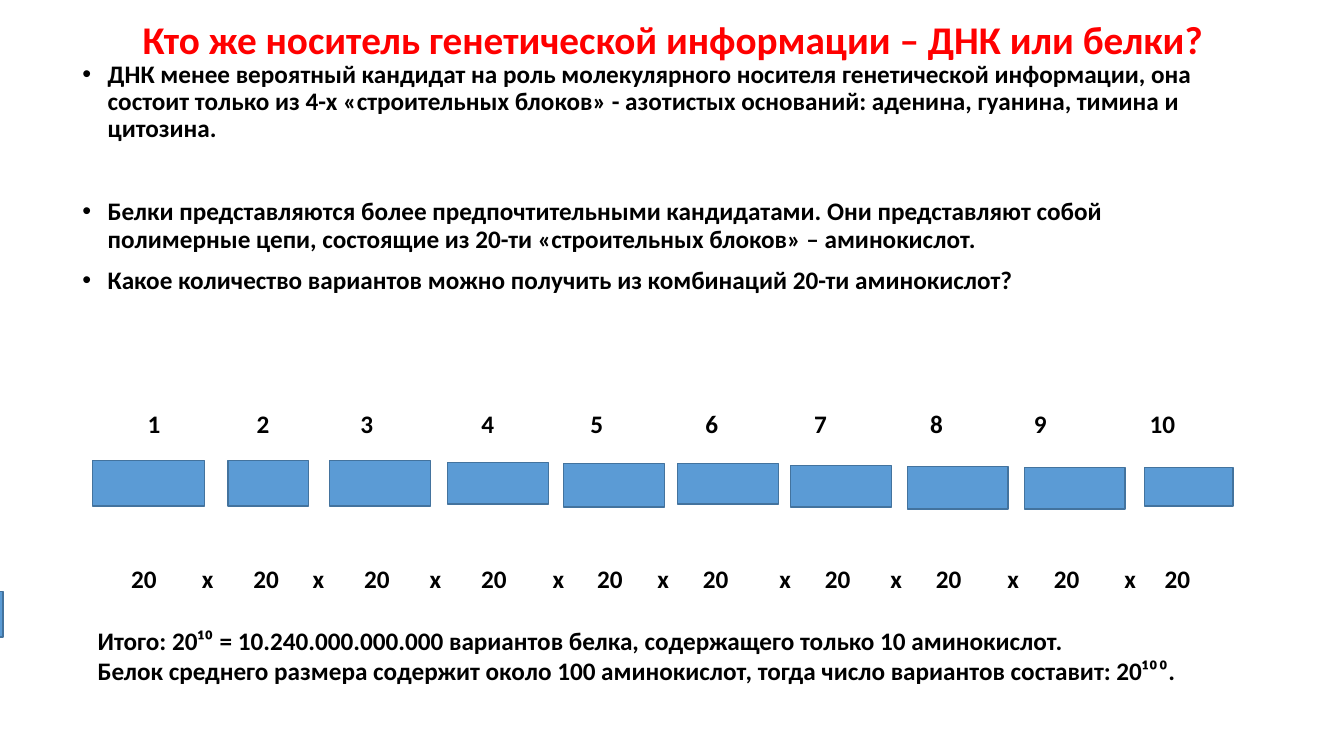
from dataclasses import dataclass

from lxml.etree import SubElement
from pptx import Presentation
from pptx.dml.color import RGBColor
from pptx.enum.shapes import MSO_SHAPE as Shape
from pptx.enum.text import MSO_ANCHOR as Anchor, PP_ALIGN as Align
from pptx.oxml.ns import qn
from pptx.util import Pt

PX = 9144
INSET = 10


@dataclass(frozen=True)
class Theme:
    font: str = "Calibri"
    title_size: int = 28
    text_size: int = 18
    title: str = "FF0000"
    text: str = "000000"
    block: str = "5B9BD5"
    block_line: str = "43739E"


class SlideBuilder:
    """Draws themed text and blocks on one slide, with lengths in px."""

    def __init__(self, presentation, theme):
        self.theme = theme
        self.slide = presentation.slides.add_slide(presentation.slide_layouts[6])

    def frame(self, box, anchor=Anchor.TOP):
        shape = self.slide.shapes.add_textbox(*(value * PX for value in box))
        shape.text_frame.word_wrap = True
        shape.text_frame.vertical_anchor = anchor
        return shape.text_frame

    def style(self, paragraph, size, color):
        font = paragraph.font
        font.name, font.size, font.bold = self.theme.font, Pt(size), True
        font.color.rgb = RGBColor.from_string(color)

    def paragraphs(self, frame, lines):
        for index, line in enumerate(lines):
            paragraph = frame.paragraphs[0] if index == 0 else frame.add_paragraph()
            paragraph.text = line
            yield paragraph

    def title(self, box, text):
        for paragraph in self.paragraphs(self.frame(box, Anchor.MIDDLE), [text]):
            paragraph.alignment = Align.CENTER
            paragraph.line_spacing = 0.9
            self.style(paragraph, self.theme.title_size, self.theme.title)

    def text(self, box, lines):
        for paragraph in self.paragraphs(self.frame(box), lines):
            self.style(paragraph, self.theme.text_size, self.theme.text)

    def bullets(self, box, items):
        frame = self.frame(box)
        lines = [line for line, _ in items]
        for paragraph, (_, gap) in zip(self.paragraphs(frame, lines), items):
            properties = paragraph._p.get_or_add_pPr()
            properties.set("marL", str(25 * PX))
            properties.set("indent", str(-25 * PX))
            SubElement(properties, qn("a:buFont"), typeface="Arial")
            SubElement(properties, qn("a:buChar"), char="•")
            paragraph.line_spacing = 0.9
            paragraph.space_before = Pt(gap)
            self.style(paragraph, self.theme.text_size, self.theme.text)

    def centred_row(self, box, labels, centres):
        line = "".join(f"\t{label}" for label in labels)
        for paragraph in self.paragraphs(self.frame(box), [line]):
            tabs = SubElement(paragraph._p.get_or_add_pPr(), qn("a:tabLst"))
            for centre in centres:
                position = (centre - box[0] - INSET) * PX
                SubElement(tabs, qn("a:tab"), pos=str(position), algn="ctr")
            self.style(paragraph, self.theme.text_size, self.theme.text)

    def block(self, box):
        shape = self.slide.shapes.add_shape(
            Shape.RECTANGLE, *(value * PX for value in box))
        shape.shadow.inherit = False
        shape.fill.solid()
        shape.fill.fore_color.rgb = RGBColor.from_string(self.theme.block)
        shape.line.color.rgb = RGBColor.from_string(self.theme.block_line)
        shape.line.width = Pt(1)


TITLE = "Кто же носитель генетической информации – ДНК или белки?"
BULLETS = [
    ("ДНК менее вероятный кандидат на роль молекулярного носителя генетической "
     "информации, она состоит только из 4-х «строительных блоков» - азотистых "
     "оснований: аденина, гуанина, тимина и цитозина.", 0),
    ("Белки представляются более предпочтительными кандидатами. Они представляют "
     "собой полимерные цепи, состоящие из 20-ти «строительных блоков» – "
     "аминокислот.", 40),
    ("Какое количество вариантов можно получить из комбинаций 20-ти аминокислот?", 10),
]
BLOCKS = [
    (92, 457, 111, 45), (226, 457, 80, 45), (-2, 587, 5, 45), (327, 457, 100, 45),
    (444, 459, 100, 41), (559, 460, 100, 43), (672, 460, 100, 40),
    (784, 462, 100, 41), (900, 463, 100, 42), (1016, 464, 100, 41),
    (1135, 464, 88, 38),
]
NUMBER_CENTRES = [153, 261, 364, 484, 592, 706, 814, 929, 1032, 1153]
FACTOR_CENTRES = [143, 206, 264, 316, 374, 432, 490, 554, 605, 658,
                  710, 779, 831, 889, 941, 1005, 1058, 1121, 1168]
TOTALS = [
    "Итого: 20¹⁰ = 10.240.000.000.000 вариантов белка, содержащего только "
    "10 аминокислот.",
    "Белок среднего размера содержит около 100 аминокислот, тогда число "
    "вариантов составит: 20¹⁰⁰.",
]


def main():
    presentation = Presentation()
    presentation.slide_width = 1333 * PX
    presentation.slide_height = 750 * PX
    builder = SlideBuilder(presentation, Theme())
    builder.title((92, 0, 1150, 82), TITLE)
    builder.bullets((72, 56, 1170, 620), BULLETS)
    for box in BLOCKS:
        builder.block(box)
    builder.centred_row((92, 400, 1131, 40), range(1, 11), NUMBER_CENTRES)
    factors = ["х" if index % 2 else "20" for index in range(len(FACTOR_CENTRES))]
    builder.centred_row((87, 554, 1145, 40), factors, FACTOR_CENTRES)
    builder.text((87, 615, 1145, 71), TOTALS)
    presentation.save("out.pptx")


if __name__ == "__main__":
    main()
